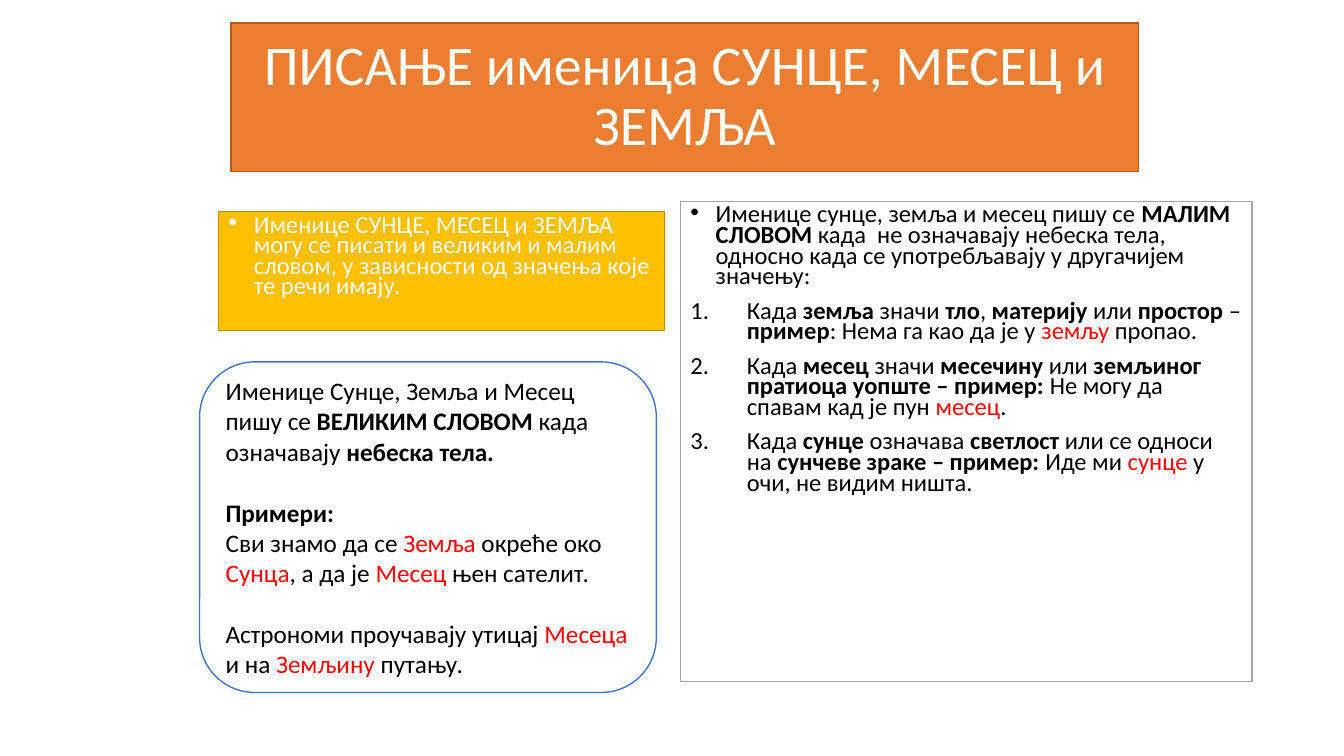
from dataclasses import dataclass

from lxml.etree import SubElement
from pptx import Presentation
from pptx.dml.color import RGBColor
from pptx.enum.shapes import MSO_SHAPE
from pptx.enum.text import MSO_ANCHOR, PP_ALIGN
from pptx.oxml.ns import qn
from pptx.slide import Slide
from pptx.util import Inches, Pt

COLORS = {
    "white": "FFFFFF",
    "black": "000000",
    "red": "FF0000",
    "orange": "ED7D31",
    "orange edge": "AF5C24",
    "gold": "FFC000",
    "gold edge": "BD8E00",
    "gray edge": "A5A5A5",
    "blue edge": "4472C4",
}
BULLET_INDENTS = {"dot": 0.25, "number": 0.56}
BOLD_MARK, RED_MARK, SPAN_BREAK = "*", "!", "|"


@dataclass(frozen=True)
class Line:
    text: str
    bullet: str = ""
    space_before: float = 0
    line_spacing: float = 1.0
    alignment: PP_ALIGN = PP_ALIGN.LEFT


@dataclass(frozen=True)
class Panel:
    left: float
    top: float
    width: float
    height: float
    fill: str
    edge: str
    text_color: str
    size: float
    lines: tuple[Line, ...]
    anchor: MSO_ANCHOR = MSO_ANCHOR.TOP
    outline: MSO_SHAPE = MSO_SHAPE.RECTANGLE


def rule(text: str, bullet: str) -> Line:
    return Line(text, bullet, space_before=10, line_spacing=0.7)


PANELS = (
    Panel(
        2.29, 0.23, 9, 1.47, "orange", "orange edge", "white", 40,
        (Line("ПИСАЊЕ именица СУНЦЕ, МЕСЕЦ и ЗЕМЉА",
              line_spacing=0.9, alignment=PP_ALIGN.CENTER),),
        MSO_ANCHOR.MIDDLE,
    ),
    Panel(
        2.17, 2.1, 4.42, 1.18, "gold", "gold edge", "white", 17.5,
        (rule("Именице СУНЦЕ, МЕСЕЦ и ЗЕМЉА могу се писати и великим и малим "
              "словом, у зависности од значења које те речи имају.", "dot"),),
    ),
    Panel(
        6.75, 2, 5.67, 4.76, "white", "gray edge", "black", 17.5,
        (
            rule("Именице сунце, земља и месец пишу се |*МАЛИМ СЛОВОМ |"
                 "када  не означавају небеска тела, односно када се "
                 "употребљавају у другачијем значењу:", "dot"),
            rule("Када |*земља| значи |*тло|, |*материју| или |*простор| – |"
                 "*пример|: Нема га као да је у |!земљу| пропао.", "number"),
            rule("Када |*месец| значи |*месечину| или |"
                 "*земљиног пратиоца уопште – пример:| "
                 "Не могу да спавам кад је пун |!месец|.", "number"),
            rule("Када |*сунце| означава |*светлост| или се односи на |"
                 "*сунчеве зраке – пример:| Иде ми |!сунце| "
                 "у очи, не видим ништа.", "number"),
        ),
    ),
    Panel(
        1.98, 3.59, 4.53, 3.28, "white", "blue edge", "black", 18,
        (
            Line("Именице Сунце, Земља и Месец пишу се |*ВЕЛИКИМ СЛОВОМ |"
                 "када означавају |*небеска тела."),
            Line("*Примери:", space_before=22),
            Line("Сви знамо да се |!Земља| окреће око |!Сунца|, а да је |"
                 "!Месец| њен сателит."),
            Line("Астрономи проучавају утицај |!Месеца| и на |!Земљину| путању.",
                 space_before=22),
        ),
        MSO_ANCHOR.MIDDLE,
        MSO_SHAPE.ROUNDED_RECTANGLE,
    ),
)


def color(name: str) -> RGBColor:
    return RGBColor.from_string(COLORS[name])


def add_bullet(para, bullet: str) -> None:
    properties = para._p.get_or_add_pPr()
    indent = Inches(BULLET_INDENTS[bullet])
    properties.set("marL", str(indent))
    properties.set("indent", str(-indent))
    if bullet == "number":
        SubElement(properties, qn("a:buAutoNum"), type="arabicPeriod")
    else:
        SubElement(properties, qn("a:buFont"), typeface="Arial")
        SubElement(properties, qn("a:buChar"), char="•")


def write_line(para, line: Line, panel: Panel) -> None:
    paragraph_format = {
        "alignment": line.alignment,
        "line_spacing": line.line_spacing,
        "space_before": Pt(line.space_before),
    }
    for name, value in paragraph_format.items():
        setattr(para, name, value)
    if line.bullet:
        add_bullet(para, line.bullet)
    for piece in line.text.split(SPAN_BREAK):
        span = para.add_run()
        span.text = piece.lstrip(BOLD_MARK + RED_MARK)
        font_format = {
            "name": "Calibri",
            "size": Pt(panel.size),
            "bold": piece.startswith(BOLD_MARK),
        }
        for name, value in font_format.items():
            setattr(span.font, name, value)
        is_red = piece.startswith(RED_MARK)
        span.font.color.rgb = color("red" if is_red else panel.text_color)


def draw_panel(page: Slide, panel: Panel) -> None:
    bounds = (panel.left, panel.top, panel.width, panel.height)
    box = page.shapes.add_shape(panel.outline, *map(Inches, bounds))
    box.shadow.inherit = False
    box.fill.solid()
    box.fill.fore_color.rgb = color(panel.fill)
    box.line.color.rgb = color(panel.edge)
    box.line.width = Pt(1)
    frame = box.text_frame
    frame.word_wrap = True
    frame.vertical_anchor = panel.anchor
    for index, line in enumerate(panel.lines):
        para = frame.add_paragraph() if index else frame.paragraphs[0]
        write_line(para, line, panel)


def main() -> None:
    deck = Presentation()
    deck.slide_width, deck.slide_height = Inches(13.33), Inches(7.5)
    page = deck.slides.add_slide(deck.slide_layouts[6])
    for panel in PANELS:
        draw_panel(page, panel)
    deck.save("out.pptx")


if __name__ == "__main__":
    main()
